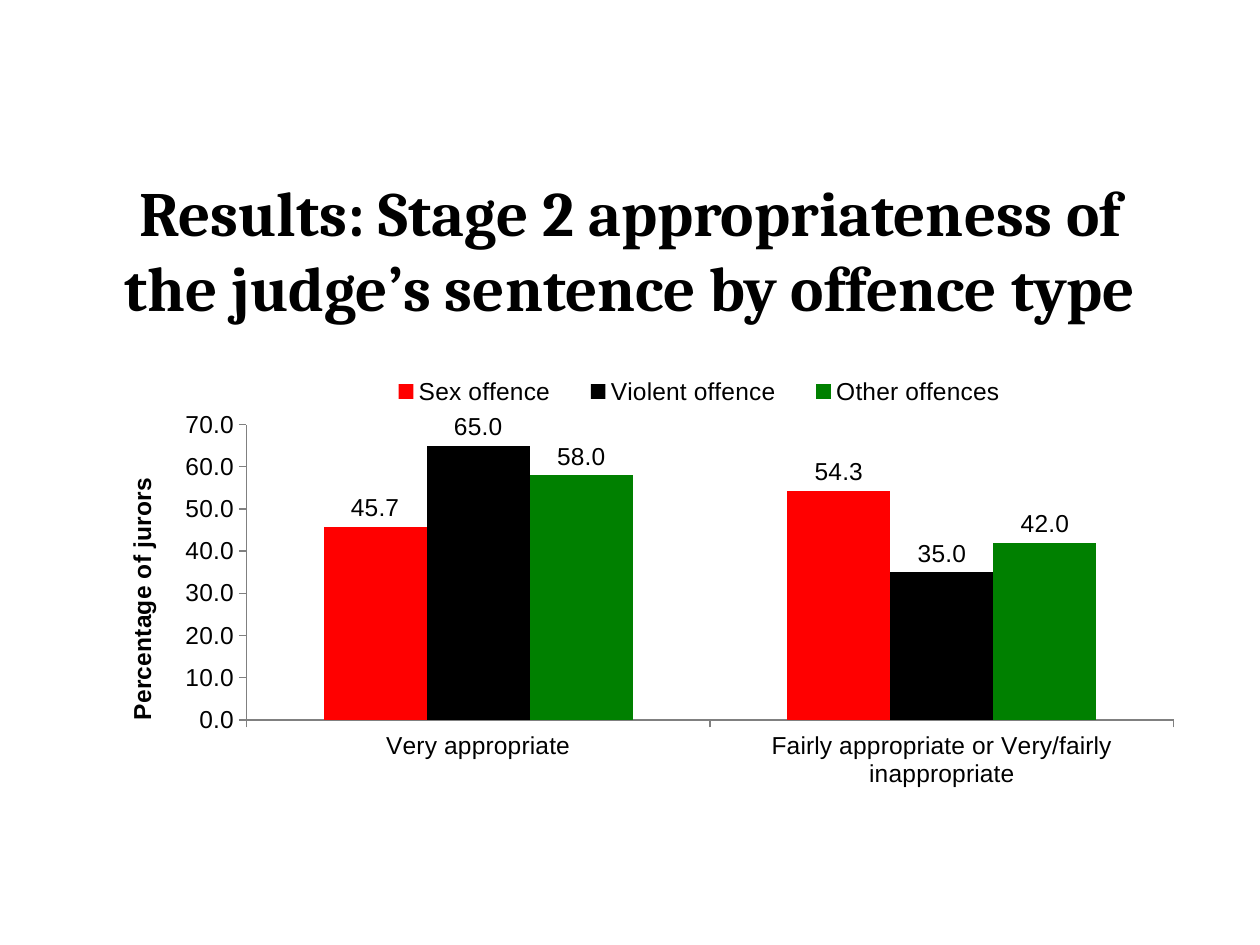
from dataclasses import dataclass

from lxml import etree
from pptx import Presentation
from pptx.chart.data import CategoryChartData
from pptx.dml.color import RGBColor
from pptx.enum.chart import XL_CHART_TYPE as ChartType
from pptx.enum.chart import XL_LABEL_POSITION as LabelPos
from pptx.enum.chart import XL_LEGEND_POSITION as LegendPos
from pptx.enum.chart import XL_TICK_MARK as Tick
from pptx.enum.text import MSO_ANCHOR, PP_ALIGN
from pptx.oxml.ns import qn
from pptx.util import Inches, Pt


@dataclass(frozen=True)
class Theme:
    text: RGBColor = RGBColor(0, 0, 0)
    axis: RGBColor = RGBColor(0x80, 0x80, 0x80)
    title_font: str = "Cambria"
    chart_font: str = "Arial"
    title_size: Pt = Pt(36)
    chart_size: Pt = Pt(14)


THEME = Theme()
CATEGORIES = ["Very appropriate", "Fairly appropriate or Very/fairly inappropriate"]
SERIES = [
    ("Sex offence", (45.7, 54.3), RGBColor(0xFF, 0, 0)),
    ("Violent offence", (65, 35), RGBColor(0, 0, 0)),
    ("Other offences", (58, 42), RGBColor(0, 0x80, 0)),
]


def set_layout(parent, index, x, y, w, h, inner=False):
    """Fix a chart part's place, in fractions of the chart area."""
    for old in parent.findall(qn("c:layout")):
        parent.remove(old)
    layout = etree.Element(qn("c:layout"))
    manual = etree.SubElement(layout, qn("c:manualLayout"))
    settings = [("layoutTarget", "inner")] if inner else []
    settings += [("xMode", "edge"), ("yMode", "edge"),
                 ("x", x), ("y", y), ("w", w), ("h", h)]
    for tag, value in settings:
        etree.SubElement(manual, qn(f"c:{tag}")).set("val", str(value))
    parent.insert(index, layout)


def add_title(s, text, left, top, width, height):
    tf = s.shapes.add_textbox(left, top, width, height).text_frame
    tf.word_wrap = True
    tf.vertical_anchor = MSO_ANCHOR.MIDDLE
    p = tf.paragraphs[0]
    p.text = text
    p.alignment = PP_ALIGN.CENTER
    p.font.name = THEME.title_font
    p.font.size = THEME.title_size
    p.font.bold = True
    p.font.color.rgb = THEME.text


def style_axes(chart):
    for axis in (chart.category_axis, chart.value_axis):
        axis.has_major_gridlines = False
        axis.major_tick_mark = Tick.OUTSIDE
        axis.minor_tick_mark = Tick.NONE
        axis.format.line.color.rgb = THEME.axis
        axis.tick_labels.font.size = THEME.chart_size

    values = chart.value_axis
    values.minimum_scale, values.maximum_scale, values.major_unit = 0, 70, 10
    values.tick_labels.number_format = "0.0"
    values.tick_labels.number_format_is_linked = False
    p = values.axis_title.text_frame.paragraphs[0]
    p.text = "Percentage of jurors"
    p.font.name = THEME.chart_font
    p.font.size = THEME.chart_size
    p.font.bold = True
    p.font.color.rgb = THEME.text


def add_offence_chart(s, left, top, width, height):
    data = CategoryChartData(number_format="0.0")
    data.categories = CATEGORIES
    for name, values, _ in SERIES:
        data.add_series(name, values)
    chart = s.shapes.add_chart(
        ChartType.COLUMN_CLUSTERED, left, top, width, height, data).chart
    chart.has_title = False
    chart.font.name = THEME.chart_font
    chart.font.size = THEME.chart_size
    chart.font.color.rgb = THEME.text
    style_axes(chart)

    # Columns and their values
    plot = chart.plots[0]
    plot.gap_width, plot.overlap = 150, 0
    plot.vary_by_categories = False
    for series, (_, _, color) in zip(plot.series, SERIES):
        series.format.fill.solid()
        series.format.fill.fore_color.rgb = color
        labels = series.data_labels
        labels.show_value = True
        labels.position = LabelPos.OUTSIDE_END
        labels.number_format = "0.0"
        labels.number_format_is_linked = False
        labels.font.size = THEME.chart_size

    # Legend above the plot
    chart.has_legend = True
    legend = chart.legend
    legend.position = LegendPos.TOP
    legend.include_in_layout = False
    legend.font.size = THEME.chart_size
    set_layout(legend._element, 1, 0.24, 0.04, 0.61, 0.09)
    plot_area = chart._chartSpace.chart.plotArea
    set_layout(plot_area, 0, 0.13, 0.16, 0.85, 0.67, inner=True)


def main():
    prs = Presentation()
    prs.slide_width, prs.slide_height = Inches(10), Inches(7.5)
    s = prs.slides.add_slide(prs.slide_layouts[6])
    add_title(s, "Results: Stage 2 appropriateness of the judge’s sentence by offence type",
              Inches(0.75), Inches(1.07), Inches(8.5), Inches(1.81))
    add_offence_chart(s, Inches(0.83), Inches(2.81), Inches(8.66), Inches(3.5))
    prs.save("out.pptx")


if __name__ == "__main__":
    main()
